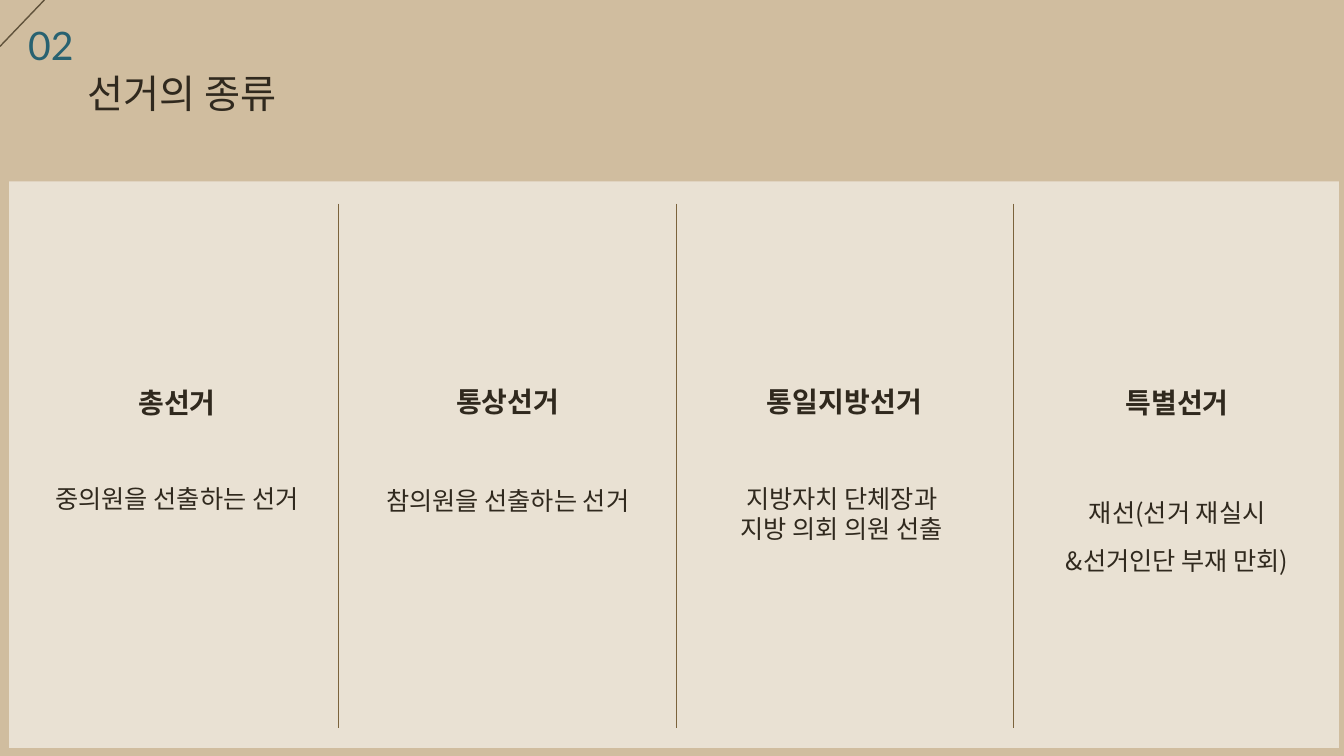
from dataclasses import dataclass

from lxml.etree import SubElement
from pptx import Presentation
from pptx.dml.color import RGBColor
from pptx.enum.shapes import MSO_CONNECTOR, MSO_SHAPE
from pptx.enum.text import PP_ALIGN
from pptx.oxml.ns import qn
from pptx.slide import Slide
from pptx.text.text import TextFrame, _Paragraph
from pptx.util import Inches, Pt

COLORS = {
    "background": "D0BD9F",
    "panel": "FFFFFF",
    "number": "286271",
    "text": "30291E",
    "corner": "60523B",
    "divider": "7B633C",
}
LATIN = "Lato"
KOREAN = "Noto Sans CJK KR"
LEADING = 1.2


@dataclass
class Election:
    left: float
    width: float
    height: float
    name: str
    lines: list[str]
    gap: float
    spacing: float = LEADING


ELECTIONS = [
    Election(0.3, 2.91, 1.65, "총선거", ["중의원을 선출하는 선거"], 46),
    Election(3.58, 2.91, 1.7, "통상선거", ["참의원을 선출하는 선거"], 48),
    Election(7.1, 2.55, 1.96, "통일지방선거",
             ["지방자치 단체장과 ", "지방 의회 의원 선출 "], 46),
    Election(10.28, 2.79, 2.29, "특별선거",
             ["재선(선거 재실시", "&선거인단 부재 만회)"], 43, LEADING * 1.6),
]


def rgb(name: str) -> RGBColor:
    return RGBColor.from_string(COLORS[name])


def add_line(s: Slide, x1: float, y1: float, x2: float, y2: float, color: str) -> None:
    line = s.shapes.add_connector(
        MSO_CONNECTOR.STRAIGHT, Inches(x1), Inches(y1), Inches(x2), Inches(y2))
    line.line.color.rgb = rgb(color)
    line.line.width = Pt(1)
    SubElement(line._element.spPr, qn("a:effectLst"))


def add_box(s: Slide, left: float, top: float, width: float, height: float) -> TextFrame:
    tf = s.shapes.add_textbox(
        Inches(left), Inches(top), Inches(width), Inches(height)).text_frame
    tf.word_wrap = True
    return tf


def add_run(p: _Paragraph, text: str, size: float, font: str = KOREAN,
            color: str = "text", bold: bool = False) -> None:
    r = p.add_run()
    r.text = text
    r.font.size = Pt(size)
    r.font.bold = bold
    r.font.color.rgb = rgb(color)
    r.font.name = font
    SubElement(r._r.get_or_add_rPr(), qn("a:ea")).set("typeface", font)


def add_panel(s: Slide) -> None:
    panel = s.shapes.add_shape(
        MSO_SHAPE.RECTANGLE, Inches(0.09), Inches(1.8), Inches(13.19), Inches(5.62))
    panel.shadow.inherit = False
    panel.fill.solid()
    panel.fill.fore_color.rgb = rgb("panel")
    fill_color = panel._element.spPr.find(f"{qn('a:solidFill')}/{qn('a:srgbClr')}")
    SubElement(fill_color, qn("a:alpha")).set("val", "55000")
    panel.line.fill.background()


def add_header(s: Slide) -> None:
    add_line(s, 0.44, 0, 0, 0.46, "corner")
    number = add_box(s, 0.18, 0.16, 0.79, 0.57)
    add_run(number.paragraphs[0], "02", 28, LATIN, "number")
    p = add_box(s, 0.77, 0.64, 2.31, 0.56).paragraphs[0]
    p.line_spacing = Pt(28 * LEADING)
    add_run(p, "선거의 종류", 28)


def add_election(s: Slide, election: Election) -> None:
    tf = add_box(s, election.left, 3.77, election.width, election.height)
    p = tf.paragraphs[0]
    p.alignment = PP_ALIGN.CENTER
    p.line_spacing = Pt(20 * LEADING)
    add_run(p, election.name, 20, bold=True)
    for i, text in enumerate(election.lines):
        p = tf.add_paragraph()
        p.alignment = PP_ALIGN.CENTER
        p.line_spacing = Pt(18 * election.spacing)
        if i == 0:
            p.space_before = Pt(election.gap)
        add_run(p, text, 18)


def main() -> None:
    prs = Presentation()
    prs.slide_width, prs.slide_height = Inches(13.33), Inches(7.5)
    s = prs.slides.add_slide(prs.slide_layouts[6])
    s.background.fill.solid()
    s.background.fill.fore_color.rgb = rgb("background")

    add_panel(s)
    add_header(s)
    for election in ELECTIONS:
        add_election(s, election)
    for x in (3.36, 6.71, 10.05):
        add_line(s, x, 2.02, x, 7.22, "divider")

    prs.save("out.pptx")


if __name__ == "__main__":
    main()
